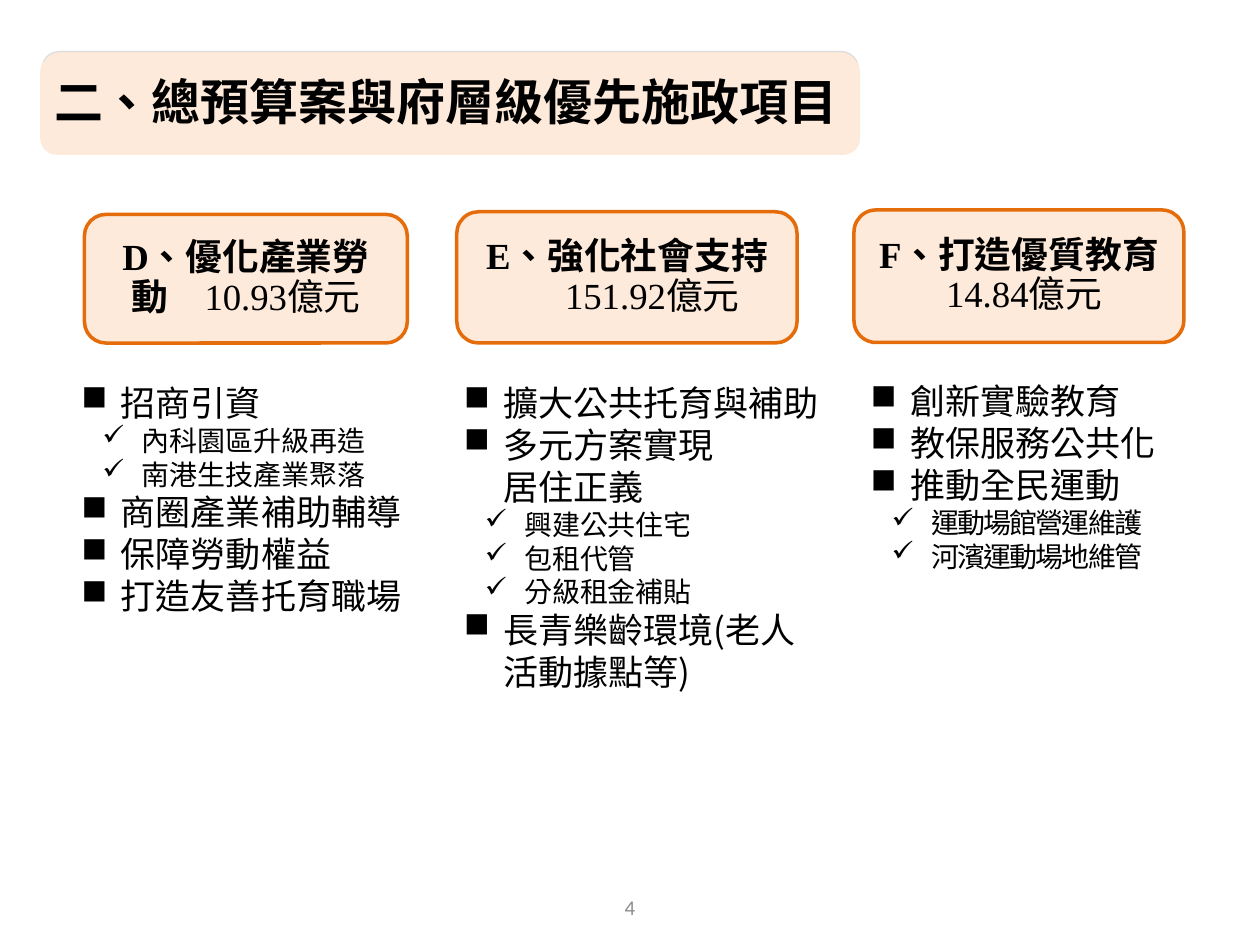
import pptx
import pptx.util
from dataclasses import dataclass
from lxml import etree
from pptx.dml.color import RGBColor
from pptx.enum.shapes import MSO_SHAPE
from pptx.enum.text import MSO_ANCHOR, MSO_AUTO_SIZE, PP_ALIGN
from pptx.oxml.ns import qn

Pt = pptx.util.Pt


@dataclass(frozen=True)
class Theme:
    ink: str = "000000"
    muted: str = "8C8C8C"
    peach: str = "FDEADA"
    orange: str = "E46C0A"
    edge: str = "DDDDDD"
    serif: str = "Times New Roman"
    sans: str = "Noto Sans CJK SC"
    number: str = "Calibri"
    title_size: int = 28
    card_size: int = 21
    item_size: int = 20
    detail_size: int = 16
    number_size: int = 12


THEME = Theme()

# Level of a list line: bullet, left margin, hanging indent, type size
LEVELS = {
    "item": ("■", 22.5, -22.5, THEME.item_size),
    "detail": ("✓", 34.5, -22.5, THEME.detail_size),
    "more": (None, 22.5, 0, THEME.item_size),
}

# Cards: box, left margin, first-line indent, bold name, amount
CARDS = [
    ((48.25, 122.5, 184.5, 73.5), 0, 0, "D、優化產業勞動　", "10.93億元"),
    ((261, 121, 194.5, 75), 29, -39, "E、強化社會支持\v", "151.92億元"),
    ((488, 120, 188.5, 75.75), 6, -12, "F、打造優質教育\v", "14.84億元"),
]

# Lists: box, letter spacing of details, lines
LISTS = [
    ((39.5, 214.5, 199, 143), 0, [
        ("item", "招商引資"),
        ("detail", "內科園區升級再造"),
        ("detail", "南港生技產業聚落"),
        ("item", "商圈產業補助輔導"),
        ("item", "保障勞動權益"),
        ("item", "打造友善托育職場"),
    ]),
    ((258, 214.5, 221, 186.5), 0, [
        ("item", "擴大公共托育與補助"),
        ("item", "多元方案實現"),
        ("more", "居住正義"),
        ("detail", "興建公共住宅"),
        ("detail", "包租代管"),
        ("detail", "分級租金補貼"),
        ("item", "長青樂齡環境(老人活動據點等)"),
    ]),
    ((490.5, 213.5, 215.5, 147.5), -1, [
        ("item", "創新實驗教育"),
        ("item", "教保服務公共化"),
        ("item", "推動全民運動"),
        ("detail", "運動場館營運維護"),
        ("detail", "河濱運動場地維管"),
    ]),
]


def apply(target, formats):
    for name, value in formats.items():
        setattr(target, name, value)


def indent(para, left, first):
    properties = para._p.get_or_add_pPr()
    properties.set("marL", str(Pt(left)))
    properties.set("indent", str(Pt(first)))
    return properties


def add_span(para, text, size, font, color=THEME.ink, bold=False, spacing=0):
    """Add a run with matching Latin and East Asian type."""
    span = para.add_run()
    span.text = text
    apply(span.font, {"size": Pt(size), "name": font, "bold": bold})
    span.font.color.rgb = RGBColor.from_string(color)
    properties = span._r.get_or_add_rPr()
    properties.set("lang", "zh-TW")
    if spacing:
        properties.set("spc", str(spacing * 100))
    east_asian = etree.SubElement(properties, qn("a:ea"))
    east_asian.set("typeface", THEME.sans)


def add_panel(page, box, line=None, width=0):
    """Add a peach rounded rectangle."""
    panel = page.shapes.add_shape(MSO_SHAPE.ROUNDED_RECTANGLE, *map(Pt, box))
    panel.shadow.inherit = False
    panel.fill.solid()
    panel.fill.fore_color.rgb = RGBColor.from_string(THEME.peach)
    if line:
        panel.line.color.rgb = RGBColor.from_string(line)
        panel.line.width = Pt(width)
    else:
        panel.line.fill.background()
    return panel


def add_card(page, box, left, first, name, amount):
    frame = add_panel(page, box, THEME.orange, 2).text_frame
    apply(frame, {"word_wrap": True, "vertical_anchor": MSO_ANCHOR.MIDDLE,
                  "margin_left": Pt(8), "margin_right": Pt(8)})
    para = frame.paragraphs[0]
    indent(para, left, first)
    apply(para, {"alignment": PP_ALIGN.CENTER, "line_spacing": 0.9})
    heading = name.rstrip("\v")
    add_span(para, heading, THEME.card_size, THEME.serif, bold=True)
    if heading != name:
        para.add_line_break()
    add_span(para, amount, THEME.card_size, THEME.serif)


def add_text_box(page, box):
    frame = page.shapes.add_textbox(*map(Pt, box)).text_frame
    frame.word_wrap = True
    return frame


def add_list(page, box, detail_spacing, lines):
    frame = add_text_box(page, box)
    for number, (level, text) in enumerate(lines):
        para = frame.add_paragraph() if number else frame.paragraphs[0]
        bullet, left, first, size = LEVELS[level]
        properties = indent(para, left, first)
        if bullet:
            etree.SubElement(properties, qn("a:buChar")).set("char", bullet)
        if level == "detail":
            para.level = 1
        spacing = detail_spacing if level == "detail" else 0
        add_span(para, text, size, THEME.sans, spacing=spacing)


def add_title(page, text):
    # Two stacked panels form the banner
    add_panel(page, (24, 29.5, 466.5, 58.5), THEME.edge, 0.75)
    add_panel(page, (23, 31.5, 468.5, 57))
    title = page.shapes.title
    apply(title, {"left": Pt(16.5), "top": Pt(37.5),
                  "width": Pt(576), "height": Pt(41)})
    apply(title.text_frame, {"word_wrap": True,
                             "auto_size": MSO_AUTO_SIZE.NONE,
                             "vertical_anchor": MSO_ANCHOR.TOP})
    para = title.text_frame.paragraphs[0]
    indent(para, 0, 7.2)
    para.alignment = PP_ALIGN.LEFT
    add_span(para, text, THEME.title_size, THEME.serif, bold=True)
    # Bring the title in front of its banner
    page.shapes._spTree.append(title._element)


def add_page_number(page, text):
    frame = add_text_box(page, (279, 504, 162, 28.75))
    frame.vertical_anchor = MSO_ANCHOR.MIDDLE
    para = frame.paragraphs[0]
    para.alignment = PP_ALIGN.CENTER
    add_span(para, text, THEME.number_size, THEME.number, THEME.muted)


def main():
    deck = pptx.Presentation()
    apply(deck, {"slide_width": Pt(720), "slide_height": Pt(540)})
    page = deck.slides.add_slide(deck.slide_layouts[5])
    add_page_number(page, "4")
    for card in CARDS:
        add_card(page, *card)
    for entry in LISTS:
        add_list(page, *entry)
    add_title(page, "二、總預算案與府層級優先施政項目")
    deck.save("out.pptx")


if __name__ == "__main__":
    main()
